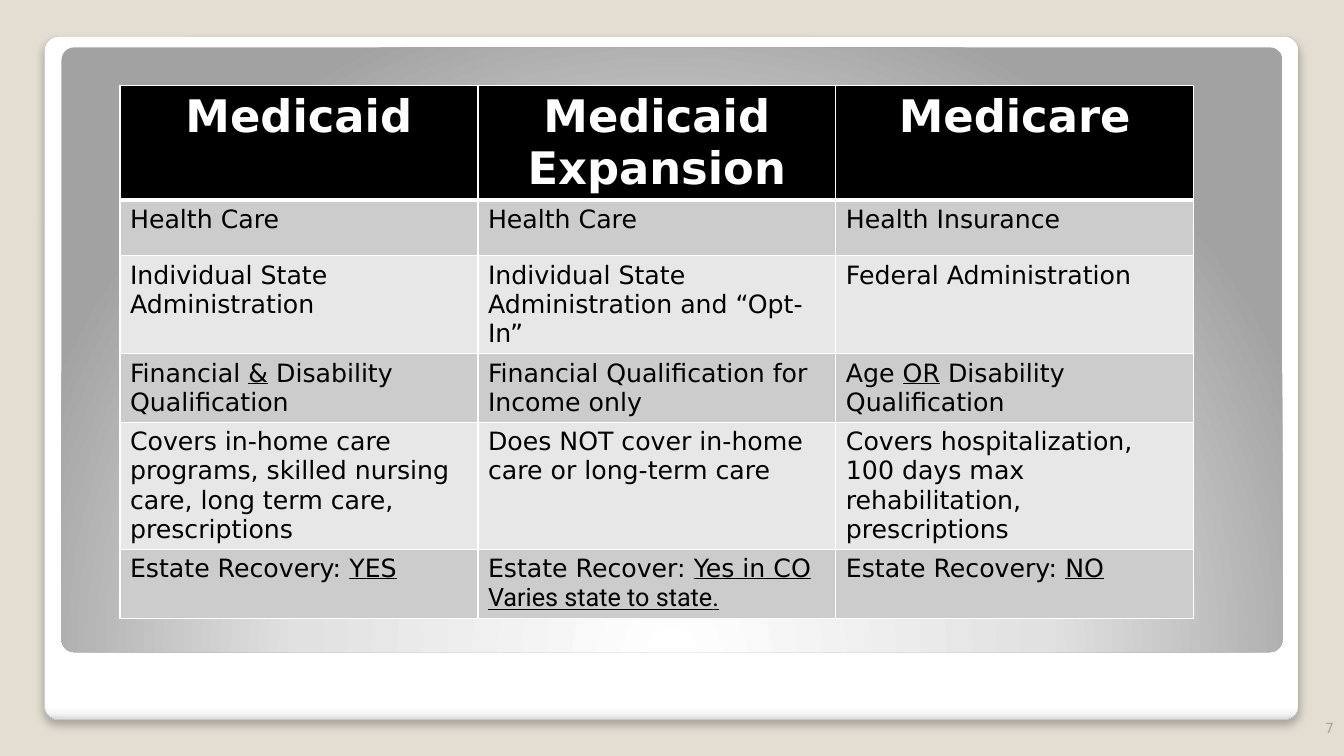
from lxml import etree
from pptx import Presentation
from pptx.dml.color import RGBColor
from pptx.enum.shapes import MSO_SHAPE as Shape
from pptx.enum.text import MSO_ANCHOR as Anchor, PP_ALIGN as Align
from pptx.oxml import parse_xml
from pptx.oxml.ns import nsdecls, qn
from pptx.util import Inches, Pt

COLORS = {
    "background": "E3DED1", "white": "FFFFFF", "black": "000000",
    "frame_line": "A4A4A4", "band_dark": "CCCCCC", "band_light": "E7E7E7",
    "number": "A8A49B",
}
BODY_FONT, NOTE_FONT = "DejaVu Sans", "Roboto"

FRAME_STOPS = [(0, "FFFFFF"), (98, "FFFFFF"), (99, "F7F7F7"), (100, "DADADA")]
FRAME_DIRECTION = '<a:lin ang="5400000" scaled="0"/>'
PANEL_STOPS = [(0, "FFFFFF"), (55, "E1E1E1"), (100, "A2A2A2")]
PANEL_DIRECTION = ('<a:path path="circle"><a:fillToRect l="50000" t="175000" '
                   'r="50000" b="-75000"/></a:path>')

# Underscores enclose underlined words.
COMPARISON = [
    ["Medicaid", "Medicaid Expansion", "Medicare"],
    ["Health Care", "Health Care", "Health Insurance"],
    ["Individual State Administration",
     "Individual State Administration and “Opt-In”",
     "Federal Administration"],
    ["Financial _&_ Disability Qualification",
     "Financial Qualification for Income only",
     "Age _OR_ Disability Qualification"],
    ["Covers in-home care programs, skilled nursing care, long term care, prescriptions",
     "Does NOT cover in-home care or long-term care",
     "Covers hospitalization, 100 days max rehabilitation, prescriptions"],
    ["Estate Recovery: _YES_",
     "Estate Recover: _Yes in CO_\n_Varies state to state._",
     "Estate Recovery: _NO_"],
]
ROW_HEIGHTS = [1.13, 0.55, 0.89, 0.68, 1.26, 0.55]
COLUMN_WIDTH = 3.55


class SlideBuilder:
    def __init__(self, slide):
        self.slide = slide
        self.header = {"size": Pt(32), "name": BODY_FONT, "bold": True, "color": "white"}
        self.body = {"size": Pt(18), "name": BODY_FONT, "bold": False, "color": "black"}
        self.number = {"size": Pt(10), "name": BODY_FONT, "color": "number"}

    def background(self, color):
        fill = self.slide.background.fill
        fill.solid()
        fill.fore_color.rgb = RGBColor.from_string(COLORS[color])

    def panel(self, box, stops, direction):
        """Add a rounded panel with a gradient fill and no line or shadow."""
        panel = self.slide.shapes.add_shape(
            Shape.ROUNDED_RECTANGLE, *(Inches(length) for length in box))
        panel.adjustments[0] = 0.021
        panel.shadow.inherit = False
        panel.line.fill.background()
        panel.fill.background()
        stop_xml = "".join(
            f'<a:gs pos="{place * 1000}"><a:srgbClr val="{color}"/></a:gs>'
            for place, color in stops)
        gradient = parse_xml(f'<a:gradFill {nsdecls("a")} rotWithShape="1">'
                             f'<a:gsLst>{stop_xml}</a:gsLst>{direction}</a:gradFill>')
        properties = panel._element.spPr
        properties.replace(properties.find(qn("a:noFill")), gradient)
        return panel

    def outline(self, panel, color, width):
        panel.line.color.rgb = RGBColor.from_string(COLORS[color])
        panel.line.width = Pt(width)

    def drop_shadow(self, panel):
        effects = panel._element.spPr.find(qn("a:effectLst"))
        effects.append(parse_xml(
            f'<a:outerShdw {nsdecls("a")} blurRad="{Pt(6)}" dist="{Pt(4)}" '
            'dir="5400000" algn="tl" rotWithShape="0"><a:srgbClr val="000000">'
            '<a:alpha val="25000"/></a:srgbClr></a:outerShdw>'))

    def add_text(self, frame, text, style, align):
        """Fill a text frame; lines after the first use the note font."""
        for index, line in enumerate(text.split("\n")):
            paragraph = frame.add_paragraph() if index else frame.paragraphs[0]
            paragraph.alignment = align
            line_style = {**style, "name": NOTE_FONT} if index else style
            for part, words in enumerate(line.split("_")):
                if not words:
                    continue
                run = paragraph.add_run()
                run.text = words
                for name, value in line_style.items():
                    if name == "color":
                        run.font.color.rgb = RGBColor.from_string(COLORS[value])
                    else:
                        setattr(run.font, name, value)
                if part % 2:
                    run.font.underline = True

    def borders(self, cell, widths):
        """Draw white cell edges; widths maps an edge letter to points."""
        properties = cell._tc.get_or_add_tcPr()
        for place, (edge, width) in enumerate(widths.items()):
            line = etree.Element(qn(f"a:ln{edge}"), w=str(Pt(width)))
            fill = etree.SubElement(line, qn("a:solidFill"))
            etree.SubElement(fill, qn("a:srgbClr"), val=COLORS["white"])
            properties.insert(place, line)

    def table(self, left, top, rows, heights, column_width):
        columns = len(rows[0])
        table = self.slide.shapes.add_table(
            len(rows), columns, Inches(left), Inches(top),
            Inches(column_width * columns), Inches(sum(heights))).table
        for column in table.columns:
            column.width = Inches(column_width)
        for r, (texts, height) in enumerate(zip(rows, heights)):
            table.rows[r].height = Inches(height)
            band = "band_dark" if r % 2 else "band_light"
            for c, text in enumerate(texts):
                cell = table.cell(r, c)
                cell.fill.solid()
                cell.fill.fore_color.rgb = RGBColor.from_string(
                    COLORS[band if r else "black"])
                self.borders(cell, {"L": 1, "R": 1, "T": 3 if r == 1 else 1,
                                    "B": 1 if r else 3})
                self.add_text(cell.text_frame, text, self.body if r else self.header,
                              Align.LEFT if r else Align.CENTER)

    def page_number(self, box, text):
        frame = self.slide.shapes.add_textbox(
            *(Inches(length) for length in box)).text_frame
        frame.word_wrap = True
        frame.vertical_anchor = Anchor.BOTTOM
        self.add_text(frame, text, self.number, Align.RIGHT)


def main():
    deck = Presentation()
    deck.slide_width, deck.slide_height = Inches(13.33), Inches(7.5)
    builder = SlideBuilder(deck.slides.add_slide(deck.slide_layouts[6]))
    builder.background("background")
    frame = builder.panel((0.44, 0.36, 12.44, 6.78), FRAME_STOPS, FRAME_DIRECTION)
    builder.outline(frame, "frame_line", 0.16)
    builder.drop_shadow(frame)
    builder.panel((0.61, 0.47, 12.11, 6), PANEL_STOPS, PANEL_DIRECTION)
    builder.table(1.19, 0.85, COMPARISON, ROW_HEIGHTS, COLUMN_WIDTH)
    builder.page_number((11.33, 6.95, 2, 0.4), "7")
    deck.save("out.pptx")


if __name__ == "__main__":
    main()
